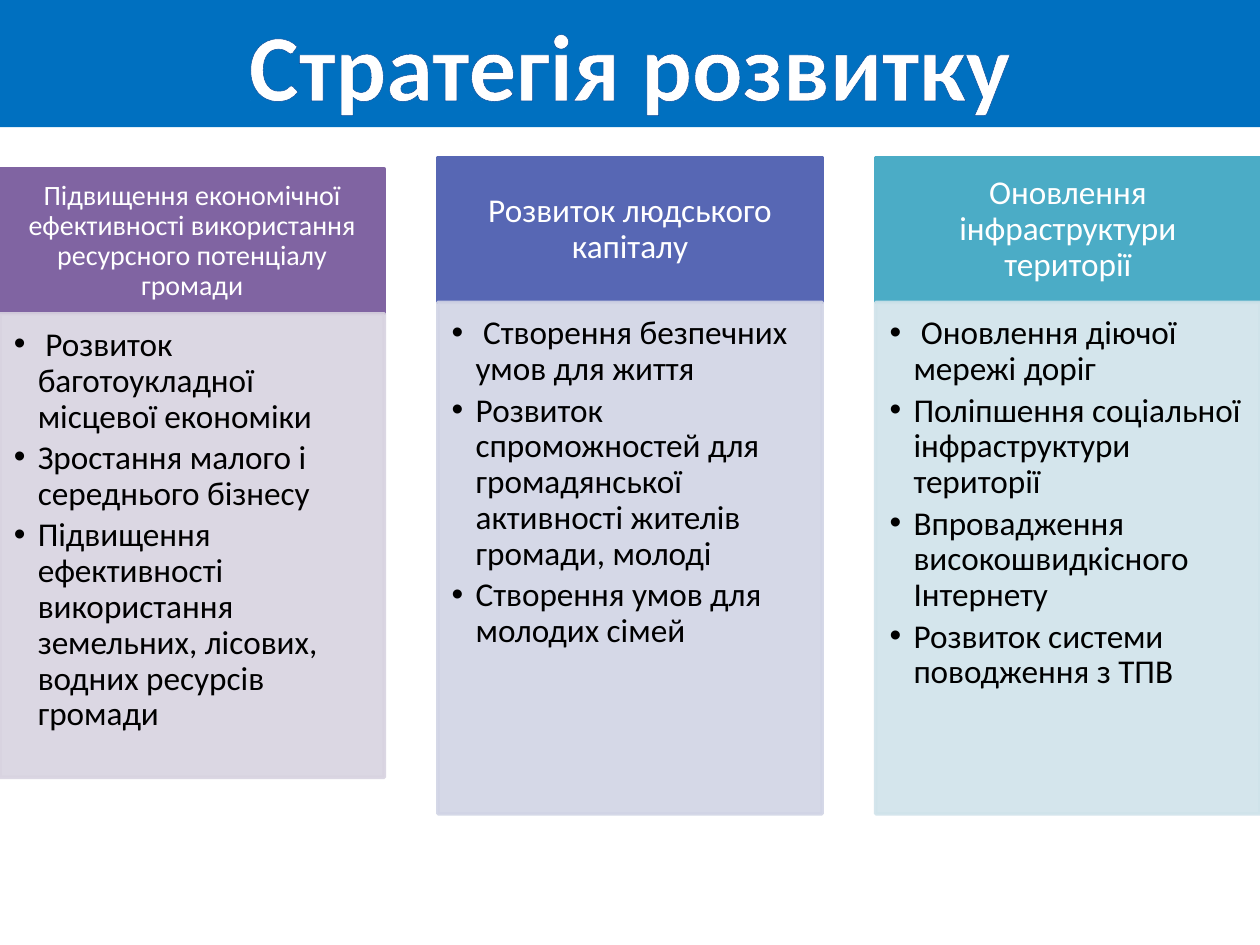
import pptx
import pptx.dml.color
import pptx.enum.shapes
import pptx.enum.text
import pptx.oxml
import pptx.oxml.ns
import pptx.util
from lxml import etree

Inches = pptx.util.Inches
Pt = pptx.util.Pt
ALIGN = pptx.enum.text.PP_ALIGN
ANCHOR = pptx.enum.text.MSO_ANCHOR

COLUMN_WIDTH = 3.05
COLUMN_STEP = 3.475
HEADER_HEIGHT = 1.15

# Each column: header, header size, top, body height, header colour, body colour, goals
COLUMNS = [
    ("Підвищення економічної ефективності використання ресурсного потенціалу громади",
     16, 1.34, 3.68, "8064A2", "D8D3E0",
     [" Розвиток баготоукладної місцевої економіки",
      "Зростання малого і середнього бізнесу",
      "Підвищення ефективності використання земельних, лісових, водних ресурсів громади"]),
    ("Розвиток людського капіталу",
     19, 1.25, 4.06, "5767B4", "D1D4E5",
     [" Створення безпечних умов для життя",
      "Розвиток спроможностей для громадянської активності жителів громади, молоді",
      "Створення умов для молодих сімей"]),
    ("Оновлення інфраструктури території",
     19, 1.25, 4.06, "4BACC6", "D0E3EA",
     [" Оновлення діючої мережі доріг",
      "Поліпшення соціальної інфраструктури території",
      "Впровадження високошвидкісного Інтернету",
      "Розвиток системи поводження з ТПВ"]),
]


def color(hex_string):
    return pptx.dml.color.RGBColor.from_string(hex_string)


def add_child(parent, tag, **attributes):
    child = etree.SubElement(parent, pptx.oxml.ns.qn(tag))
    for name, value in attributes.items():
        child.set(name, value)
    return child


def write_text(paragraph, text, size=19, fill="000000", bold=False, align=ALIGN.LEFT,
               spacing=0.9, after=0, bullet=False):
    """Fill one paragraph and return its run."""
    if bullet:
        properties = paragraph._p.get_or_add_pPr()
        properties.set("marL", str(Inches(0.19)))
        properties.set("indent", str(-Inches(0.19)))
        add_child(properties, "a:buFont", typeface="Arial")
        add_child(properties, "a:buChar", char="•")
    paragraph.alignment = align
    paragraph.line_spacing = spacing
    paragraph.space_before = Pt(0)
    paragraph.space_after = Pt(after)
    run = paragraph.add_run()
    run.text = text
    run.font.name = "Calibri"
    run.font.size = Pt(size)
    run.font.bold = bold
    run.font.color.rgb = color(fill)
    return run


class StrategySlide:
    """Holds the style and the current slide."""

    def __init__(self, presentation):
        self.title_fill = "0070C0"
        self.title_outline = "054697"
        self.light_text = "FFFFFF"
        self.body_opacity = 90
        self.slide = presentation.slides.add_slide(presentation.slide_layouts[5])

    def title(self, text):
        title = self.slide.shapes.title
        title.left, title.top = Inches(0), Inches(0)
        title.width, title.height = Inches(10), Inches(1.01)
        title.fill.solid()
        title.fill.fore_color.rgb = color(self.title_fill)
        frame = title.text_frame
        frame.auto_size = pptx.enum.text.MSO_AUTO_SIZE.NONE
        frame.vertical_anchor = ANCHOR.TOP
        run = write_text(frame.paragraphs[0], text, size=54, fill=self.light_text,
                         bold=True, align=ALIGN.CENTER, spacing=1.0)
        # The letter outline comes before the fill in the run properties
        properties = run._r.get_or_add_rPr()
        outline = add_child(properties, "a:ln", w=str(Pt(1)))
        add_child(add_child(outline, "a:solidFill"), "a:srgbClr", val=self.title_outline)
        properties.insert(0, outline)

    def panel(self, left, top, height, fill, insets, anchor, opacity=100):
        panel = self.slide.shapes.add_shape(
            pptx.enum.shapes.MSO_SHAPE.RECTANGLE,
            Inches(left), Inches(top), Inches(COLUMN_WIDTH), Inches(height))
        panel.shadow.inherit = False
        panel.fill.solid()
        panel.fill.fore_color.rgb = color(fill)
        panel.line.color.rgb = color(fill)
        panel.line.width = Pt(2)
        if opacity < 100:
            for shade in panel._element.spPr.iter(pptx.oxml.ns.qn("a:srgbClr")):
                add_child(shade, "a:alpha", val=str(opacity * 1000))
        frame = panel.text_frame
        frame.word_wrap = True
        frame.vertical_anchor = anchor
        (frame.margin_left, frame.margin_top,
         frame.margin_right, frame.margin_bottom) = map(Inches, insets)
        return frame

    def header(self, left, top, text, size, fill):
        side, edge = (0.12, 0.07) if size < 19 else (0.15, 0.08)
        frame = self.panel(left, top, HEADER_HEIGHT, fill,
                           (side, edge, side, edge), ANCHOR.MIDDLE)
        write_text(frame.paragraphs[0], text, size=size, fill=self.light_text,
                   align=ALIGN.CENTER)

    def goals(self, left, top, height, fill, items):
        frame = self.panel(left, top, height, fill, (0.11, 0.11, 0.15, 0.17),
                           ANCHOR.TOP, self.body_opacity)
        for index, item in enumerate(items):
            paragraph = frame.add_paragraph() if index else frame.paragraphs[0]
            write_text(paragraph, item, after=3, bullet=True)


def main():
    presentation = pptx.Presentation()
    presentation.slide_width = Inches(10)
    presentation.slide_height = Inches(7.5)
    strategy = StrategySlide(presentation)

    # Title band
    strategy.title("Стратегія розвитку")

    # Three columns: a header above its list of goals
    for index, (header, size, top, height, dark, pale, items) in enumerate(COLUMNS):
        left = index * COLUMN_STEP
        strategy.header(left, top, header, size, dark)
        strategy.goals(left, top + HEADER_HEIGHT, height, pale, items)

    presentation.save("out.pptx")


if __name__ == "__main__":
    main()
